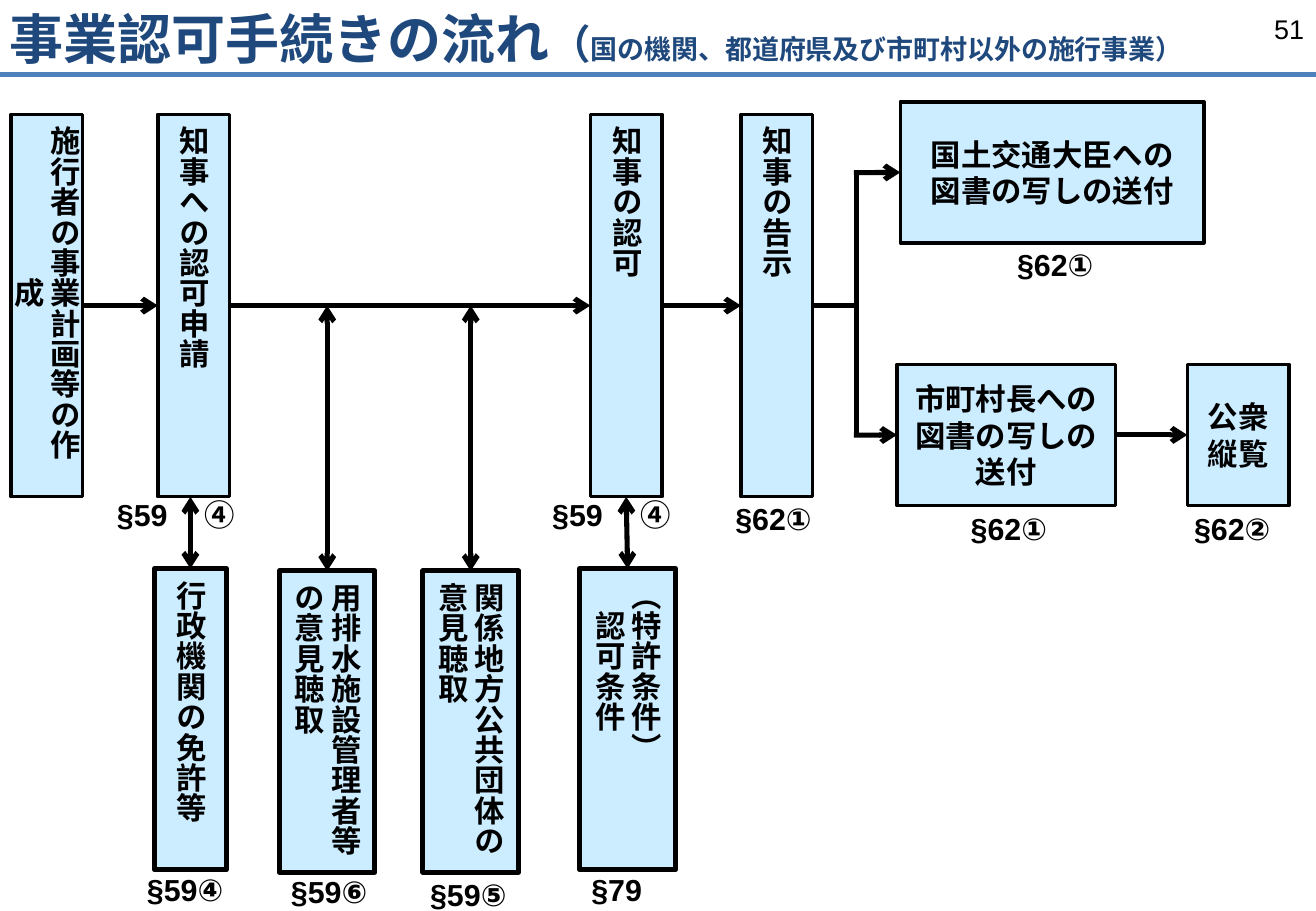
from lxml import etree
from pptx import Presentation
from pptx.dml.color import RGBColor
from pptx.enum.shapes import MSO_CONNECTOR, MSO_SHAPE
from pptx.enum.text import MSO_ANCHOR, PP_ALIGN
from pptx.oxml.ns import qn
from pptx.util import Cm, Pt

STRAIGHT = MSO_CONNECTOR.STRAIGHT
RECT = MSO_SHAPE.RECTANGLE
MIDDLE, TOP = MSO_ANCHOR.MIDDLE, MSO_ANCHOR.TOP
LEFT, CENTER, RIGHT = PP_ALIGN.LEFT, PP_ALIGN.CENTER, PP_ALIGN.RIGHT
SIDE_TOP, SIDE_LEFT, SIDE_BOTTOM, SIDE_RIGHT = range(4)

COLORS = {"ink": "000000", "box": "CCECFF", "title": "1F497D", "rule": "4F81BD"}
WIDTH, HEIGHT = 27.51, 19.05


class FlowSlide:
    box_font, label_font = "Times New Roman", "Arial"
    inset = 0.25

    def __init__(self, slide):
        self.shapes = slide.shapes

    def color(self, name):
        return RGBColor.from_string(COLORS[name])

    def style(self, font, face, size, bold=True, color="ink"):
        font.name, font.size, font.bold = face, Pt(size), bold
        font.color.rgb = self.color(color)

    def box(self, text, x, y, w, h, vertical=False, border=2, align=CENTER):
        shape = self.shapes.add_shape(RECT, Cm(x), Cm(y), Cm(w), Cm(h))
        shape.shadow.inherit = False
        shape.fill.solid()
        shape.fill.fore_color.rgb = self.color("box")
        shape.line.color.rgb = self.color("ink")
        shape.line.width = Pt(border)
        frame = shape.text_frame
        frame.text, frame.word_wrap, frame.vertical_anchor = text, True, MIDDLE
        frame.margin_left = frame.margin_right = Cm(self.inset)
        frame.margin_top = frame.margin_bottom = Cm(self.inset)
        if vertical:
            shape.element.txBody.bodyPr.set("vert", "eaVert")
        for paragraph in frame.paragraphs:
            paragraph.alignment = align
            self.style(paragraph.font, self.box_font, 18)
        return shape

    def text(self, x, y, w, h, align, anchor=MIDDLE):
        frame = self.shapes.add_textbox(Cm(x), Cm(y), Cm(w), Cm(h)).text_frame
        frame.word_wrap, frame.vertical_anchor = True, anchor
        frame.paragraphs[0].alignment = align
        return frame.paragraphs[0]

    def label(self, text, center, y, w=2.46):
        paragraph = self.text(center - w / 2, y, w, 0.91, CENTER)
        paragraph.text = text
        self.style(paragraph.font, self.label_font, 18)

    def line(self, x1, y1, x2, y2, begin=None, end=None, arrows=(), color="ink"):
        line = self.shapes.add_connector(STRAIGHT, Cm(x1), Cm(y1), Cm(x2), Cm(y2))
        if begin:
            line.begin_connect(*begin)
        if end:
            line.end_connect(*end)
        line.line.color.rgb = self.color(color)
        line.line.width = Pt(3)
        for tag in arrows:
            etree.SubElement(line.line._get_or_add_ln(), qn(tag), type="arrow")
        etree.SubElement(line.element.spPr, qn("a:effectLst"))


ONE_WAY = ("a:tailEnd",)
BOTH_WAYS = ("a:headEnd", "a:tailEnd")

prs = Presentation()
prs.slide_width, prs.slide_height = Cm(WIDTH), Cm(HEIGHT)
flow = FlowSlide(prs.slides.add_slide(prs.slide_layouts[6]))

# Header
flow.line(0, 1.55, WIDTH, 1.55, color="rule")
page_number = flow.text(21.08, 0.13, 6.43, 1.02, RIGHT, TOP)
page_number.text = "51"
flow.style(page_number.font, flow.label_font, 16, bold=False)
title = flow.text(-0.05, 0, WIDTH, 1.63, LEFT, TOP)
for words, size in (("事業認可手続きの流れ", 32), ("（", 24),
                    ("国の機関、都道府県及び市町村以外の施行事業）", 16)):
    run = title.add_run()
    run.text = words
    flow.style(run.font, flow.label_font, size, color="title")

# Main steps
STEP_Y, STEP_W, STEP_H = 2.39, 1.5, 8
AXIS = STEP_Y + STEP_H / 2
STEP_BOTTOM = STEP_Y + STEP_H
plan, application, approval, notice = [
    flow.box(text, x, STEP_Y, STEP_W, STEP_H, vertical=True)
    for text, x in (("施行者の事業計画等の作成", 0.23), ("知事への認可申請", 3.3),
                    ("知事の認可", 12.34), ("知事の告示", 15.49))]

# Supporting procedures
SIDE_Y, SIDE_H = 11.89, 6.3
permits, drainage, bodies, conditions = [
    flow.box(text, x, y, w, SIDE_H, vertical=True, border=3, align=align)
    for text, x, y, w, align in (
        ("行政機関の免許等", 3.23, SIDE_Y, 1.5, CENTER),
        ("用排水施設管理者等の意見聴取", 5.84, SIDE_Y + 0.05, 2, LEFT),
        ("関係地方公共団体の意見聴取", 8.84, SIDE_Y + 0.05, 2, LEFT),
        ("（特許条件）\n認可条件", 12.12, SIDE_Y, 2, CENTER))]

# Results of the notice
RESULT_H = 2.95
minister = flow.box("国土交通大臣への\n図書の写しの送付", 18.82, 2.13, 6.35, RESULT_H)
mayor = flow.box("市町村長への\n図書の写しの\n送付", 18.75, 7.62, 4.57, RESULT_H)
public = flow.box("公衆縦覧", 24.82, 7.62, 2.13, RESULT_H)

# Arrows from left to right
for source, target in ((plan, application), (application, approval),
                       (approval, notice), (mayor, public)):
    flow.line(0, 0, 0, 0, (source, SIDE_RIGHT), (target, SIDE_LEFT), ONE_WAY)

# Arrows to the supporting procedures
flow.line(3.98, SIDE_Y, 3.98, STEP_BOTTOM, (permits, SIDE_TOP), arrows=BOTH_WAYS)
for procedure, x in ((drainage, 6.84), (bodies, 9.84)):
    flow.line(x, AXIS, x, SIDE_Y, end=(procedure, SIDE_TOP), arrows=BOTH_WAYS)
flow.line(0, 0, 0, 0, (conditions, SIDE_TOP), (approval, SIDE_BOTTOM), BOTH_WAYS)

# Fork after the notice
FORK_X, FORK_TOP, FORK_BOTTOM = 17.9, 3.61, 9.1
flow.line(16.99, AXIS, FORK_X, AXIS, begin=(notice, SIDE_RIGHT))
flow.line(FORK_X, FORK_TOP, FORK_X, FORK_BOTTOM)
for result, y in ((minister, FORK_TOP), (mayor, FORK_BOTTOM)):
    flow.line(FORK_X - 0.05, y, 18.8, y, end=(result, SIDE_LEFT), arrows=ONE_WAY)

# Article numbers
for center in (3.68, 12.78):
    flow.label("§59　 ④", center, 10.31, 3.76)
for article, center, y in (
        ("§62①", 16.17, 10.39), ("§62①", 22.06, 10.59), ("§62①", 22.06, 5.08),
        ("§62②", 25.76, 10.59), ("§59④", 3.87, 18.14), ("§59⑥", 6.88, 18.19),
        ("§59⑤", 9.79, 18.24), ("§79", 12.89, 18.14)):
    flow.label(article, 21.09 if y == 10.59 and center < 25 else center, y)

prs.save("out.pptx")
